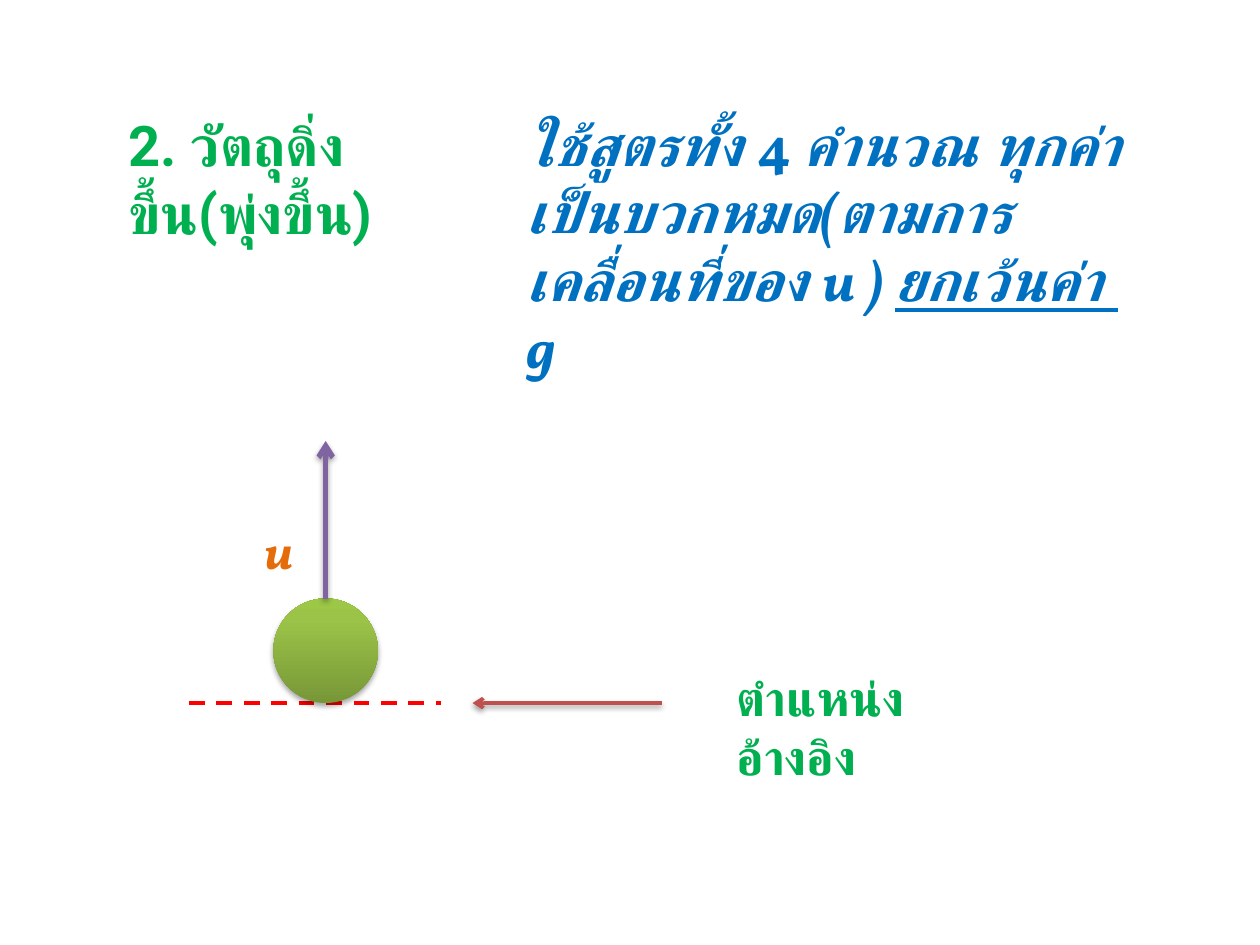
from dataclasses import dataclass
from typing import Optional

from lxml import etree
from pptx import Presentation
from pptx.dml.color import RGBColor
from pptx.enum.dml import MSO_LINE
from pptx.enum.shapes import MSO_CONNECTOR, MSO_SHAPE
from pptx.enum.text import MSO_ANCHOR, MSO_AUTO_SIZE, PP_ALIGN
from pptx.oxml import parse_xml
from pptx.oxml.ns import nsdecls, qn
from pptx.util import Inches, Pt

STRAIGHT, OVAL = MSO_CONNECTOR.STRAIGHT, MSO_SHAPE.OVAL
DASH, TOP, LEFT = MSO_LINE.DASH, MSO_ANCHOR.TOP, PP_ALIGN.LEFT
GROW = MSO_AUTO_SIZE.SHAPE_TO_FIT_TEXT

GREEN, BLUE, ORANGE = "00B050", "0070C0", "E46C0A"
RED, BRICK, PURPLE = "FF0000", "C0504D", "8064A2"
BALL_STOPS = [(0, "779737"), (80, "9BC348"), (100, "9DC746")]

GROUND_Y = 5.58
BALL_SIZE = 0.83
BALL_X, BALL_Y = 2.17, GROUND_Y - BALL_SIZE
BALL_MID = BALL_X + BALL_SIZE / 2


@dataclass
class Label:
    box: tuple
    runs: list  # (text, format values that differ from the label's)
    font: dict
    color: str


@dataclass
class Shadow:
    alpha: int
    distance: float


@dataclass
class Line:
    start: tuple
    end: tuple
    color: str
    width: float
    shadow: Optional[Shadow] = None
    dashed: bool = False
    arrow: bool = False


def rgb(color: str) -> RGBColor:
    return RGBColor.from_string(color)


def fill_label(sp, label: Label) -> None:
    """Place a text shape and write its formatted runs."""
    sp.left, sp.top, sp.width, sp.height = map(Inches, label.box)
    tf = sp.text_frame
    tf.word_wrap, tf.auto_size, tf.vertical_anchor = True, GROW, TOP
    p = tf.paragraphs[0]
    p.alignment = LEFT
    for text, changes in label.runs:
        r = p.add_run()
        r.text = text
        for name, value in {**label.font, **changes}.items():
            setattr(r.font, name, value)
        r.font.color.rgb = rgb(label.color)


def add_label(s, label: Label) -> None:
    fill_label(s.shapes.add_textbox(*map(Inches, label.box)), label)


def set_shadow(sp, shadow: Optional[Shadow]) -> None:
    """Give a shape a soft downward shadow, or none at all."""
    effects = etree.SubElement(sp._element.spPr, qn("a:effectLst"))
    if shadow:
        effects.append(parse_xml(
            f'<a:outerShdw {nsdecls("a")} blurRad="{Pt(3.15)}" '
            f'dist="{Pt(shadow.distance)}" dir="5400000" rotWithShape="0">'
            f'<a:srgbClr val="000000"><a:alpha val="{shadow.alpha * 1000}"/>'
            '</a:srgbClr></a:outerShdw>'))


def add_line(s, line: Line):
    cx = s.shapes.add_connector(STRAIGHT, *map(Inches, line.start + line.end))
    cx.line.color.rgb = rgb(line.color)
    cx.line.width = Pt(line.width)
    if line.dashed:
        cx.line.dash_style = DASH
    if line.arrow:
        etree.SubElement(cx.line._get_or_add_ln(), qn("a:tailEnd"), type="arrow")
    set_shadow(cx, line.shadow)
    return cx


def add_ball(s):
    ball = s.shapes.add_shape(
        OVAL, *map(Inches, (BALL_X, BALL_Y, BALL_SIZE, BALL_SIZE)))
    stops = "".join(f'<a:gs pos="{pos * 1000}"><a:srgbClr val="{color}"/></a:gs>'
                    for pos, color in BALL_STOPS)
    ball._element.spPr.append(parse_xml(
        f'<a:gradFill {nsdecls("a")} rotWithShape="1"><a:gsLst>{stops}</a:gsLst>'
        '<a:lin ang="16200000" scaled="0"/></a:gradFill>'))
    ball.line.fill.background()
    set_shadow(ball, Shadow(35, 1.8))
    return ball


def main() -> None:
    prs = Presentation()
    prs.slide_width, prs.slide_height = Inches(10), Inches(7.5)
    s = prs.slides.add_slide(prs.slide_layouts[5])

    roboto = {"name": "Roboto", "bold": True}
    vollkorn = {"name": "Vollkorn", "bold": True, "italic": True}
    large, medium = {"size": Pt(32)}, {"size": Pt(28)}

    # Heading and rule
    fill_label(s.shapes.title, Label(
        (0.92, 0.83, 3.06, 0.64), [("2. วัตถุดิ่งขึ้น(พุ่งขึ้น)", {})],
        roboto | large, GREEN))
    add_label(s, Label(
        (4.08, 0.83, 5.08, 1.72),
        [("ใช้สูตรทั้ง ", {}),
         ("4 ", {"italic": False}),
         ("คำนวณ ทุกค่าเป็นบวกหมด(ตามการเคลื่อนที่ของ u ) ", {}),
         ("ยกเว้นค่า ", {"underline": True}),
         (" ", {"italic": False}),
         ("g", {})],
        vollkorn | large, BLUE))

    # Reference level and its pointer
    add_line(s, Line((1.5, GROUND_Y), (3.5, GROUND_Y), RED, 2.25, dashed=True))
    add_label(s, Label((5.75, 5.25, 2.08, 0.57), [("ตำแหน่งอ้างอิง", {})],
                       roboto | medium, GREEN))
    add_line(s, Line((5.25, GROUND_Y), (3.75, GROUND_Y), BRICK, 2,
                     Shadow(38, 1.6), arrow=True))

    # Ball thrown upward with velocity u
    ball = add_ball(s)
    add_label(s, Label((2, 4.08, 0.5, 0.57), [("u", {})],
                       vollkorn | medium, ORANGE))
    velocity = add_line(s, Line((BALL_MID, BALL_Y), (BALL_MID, 3.5), PURPLE, 3,
                                Shadow(35, 1.8), arrow=True))
    velocity.begin_connect(ball, 0)

    prs.save("out.pptx")


if __name__ == "__main__":
    main()
